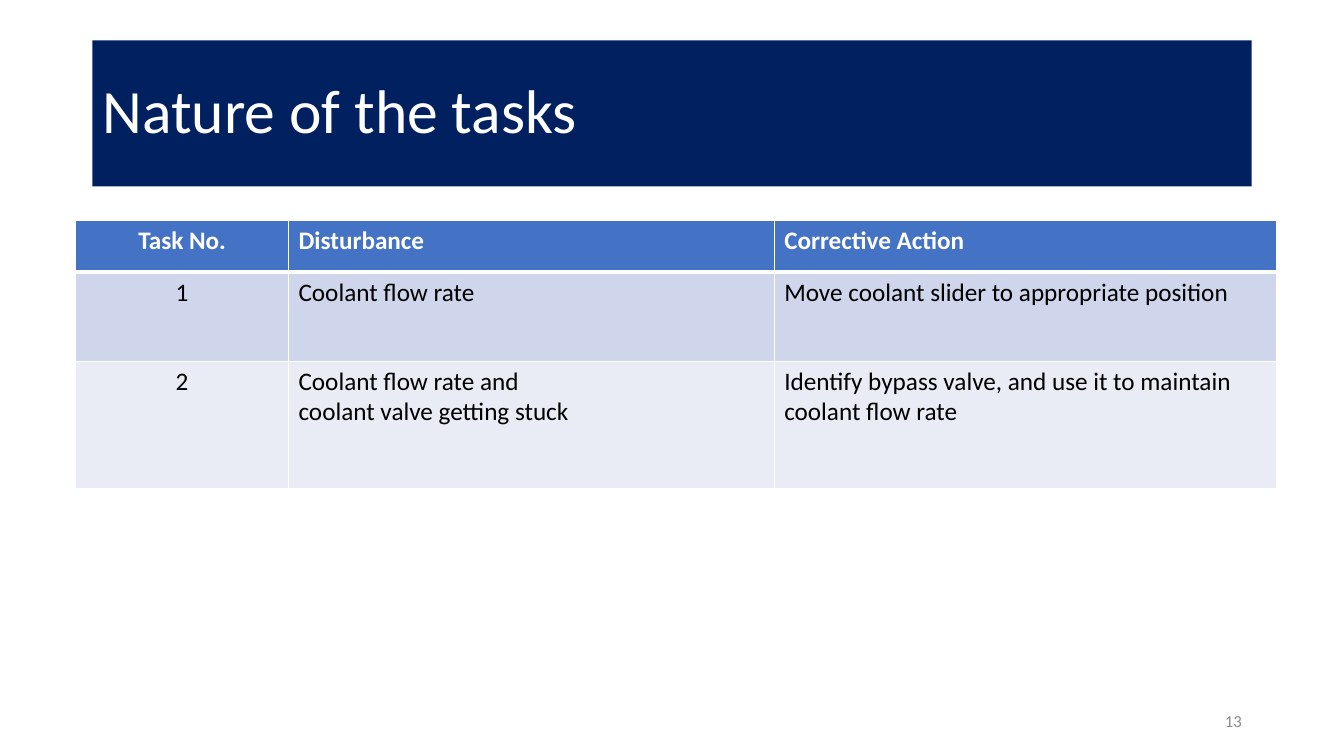
from dataclasses import dataclass

from lxml.etree import SubElement
from pptx import Presentation
from pptx.dml.color import RGBColor
from pptx.enum.text import MSO_ANCHOR, MSO_AUTO_SIZE, PP_ALIGN
from pptx.oxml.ns import qn
from pptx.util import Cm, Pt


@dataclass(frozen=True)
class Theme:
    font: str = "Calibri"
    navy: str = "002060"
    white: str = "FFFFFF"
    black: str = "000000"
    grey: str = "8C8C8C"
    header: str = "4472C4"
    bands: tuple = ("CFD5EA", "E9EBF5")
    title_size: int = 44
    body_size: int = 18
    number_size: int = 12
    rule: int = 1
    header_rule: int = 3


class SlideBuilder:
    def __init__(self, prs, theme):
        self.theme = theme
        self.s = prs.slides.add_slide(prs.slide_layouts[5])

    def set_text(self, tf, text, size, color, align=PP_ALIGN.LEFT, bold=False, spacing=1.0):
        tf.text = text
        for p in tf.paragraphs:
            p.alignment, p.line_spacing = align, spacing
            for r in p.runs:
                formats = {"name": self.theme.font, "size": Pt(size), "bold": bold}
                for name, value in formats.items():
                    setattr(r.font, name, value)
                r.font.color.rgb = RGBColor.from_string(color)

    def fill(self, target, color):
        target.fill.solid()
        target.fill.fore_color.rgb = RGBColor.from_string(color)

    def frame(self, tf):
        formats = {"word_wrap": True, "auto_size": MSO_AUTO_SIZE.NONE,
                   "vertical_anchor": MSO_ANCHOR.MIDDLE}
        for name, value in formats.items():
            setattr(tf, name, value)

    def title(self, text, left, top, width, height):
        sp = self.s.shapes.title
        box = {"left": left, "top": top, "width": width, "height": height}
        for name, value in box.items():
            setattr(sp, name, Cm(value))
        self.fill(sp, self.theme.navy)
        self.frame(sp.text_frame)
        self.set_text(sp.text_frame, text, self.theme.title_size, self.theme.white, spacing=0.9)

    def slide_number(self, text, *box):
        tf = self.s.shapes.add_textbox(*map(Cm, box)).text_frame
        self.frame(tf)
        self.set_text(tf, text, self.theme.number_size, self.theme.grey, PP_ALIGN.RIGHT)

    def borders(self, cell, **widths):
        tcPr = cell._tc.get_or_add_tcPr()
        for side in "LRTB":
            width = Pt(widths.get(side, self.theme.rule))
            ln = SubElement(tcPr, qn(f"a:ln{side}"), w=str(width))
            SubElement(SubElement(ln, qn("a:solidFill")), qn("a:srgbClr"), val=self.theme.white)

    def table(self, rows, left, top, widths, heights):
        t = self.theme
        table = self.s.shapes.add_table(
            len(rows), len(widths), Cm(left), Cm(top), Cm(sum(widths)), Cm(sum(heights))).table
        for column, width in zip(table.columns, widths):
            column.width = Cm(width)
        for i, (row, height) in enumerate(zip(rows, heights)):
            table.rows[i].height = Cm(height)
            is_header = i == 0
            for j, text in enumerate(row):
                cell = table.cell(i, j)
                # Borders come before the fill in the cell properties
                rules = {0: {"B": t.header_rule}, 1: {"T": t.header_rule}}.get(i, {})
                self.borders(cell, **rules)
                self.fill(cell, t.header if is_header else t.bands[(i - 1) % 2])
                self.set_text(cell.text_frame, text, t.body_size,
                              t.white if is_header else t.black,
                              PP_ALIGN.CENTER if j == 0 else PP_ALIGN.LEFT, is_header)


TASKS = [
    ("Task No.", "Disturbance", "Corrective Action"),
    ("1", "Coolant flow rate", "Move coolant slider to appropriate position"),
    ("2", "Coolant flow rate and\ncoolant valve getting stuck",
     "Identify bypass valve, and use it to maintain coolant flow rate"),
]


def main():
    prs = Presentation()
    prs.slide_width, prs.slide_height = Cm(33.87), Cm(19.05)
    slide = SlideBuilder(prs, Theme())

    # Title band
    slide.title("Nature of the tasks", 2.33, 1.02, 29.21, 3.68)

    # Slide number
    slide.slide_number("13", 23.93, 17.65, 7.62, 1.02)

    # Task table
    slide.table(TASKS, 1.91, 5.56, widths=(5.36, 12.24, 12.67), heights=(1.3, 2.24, 3.2))

    prs.save("out.pptx")


if __name__ == "__main__":
    main()
